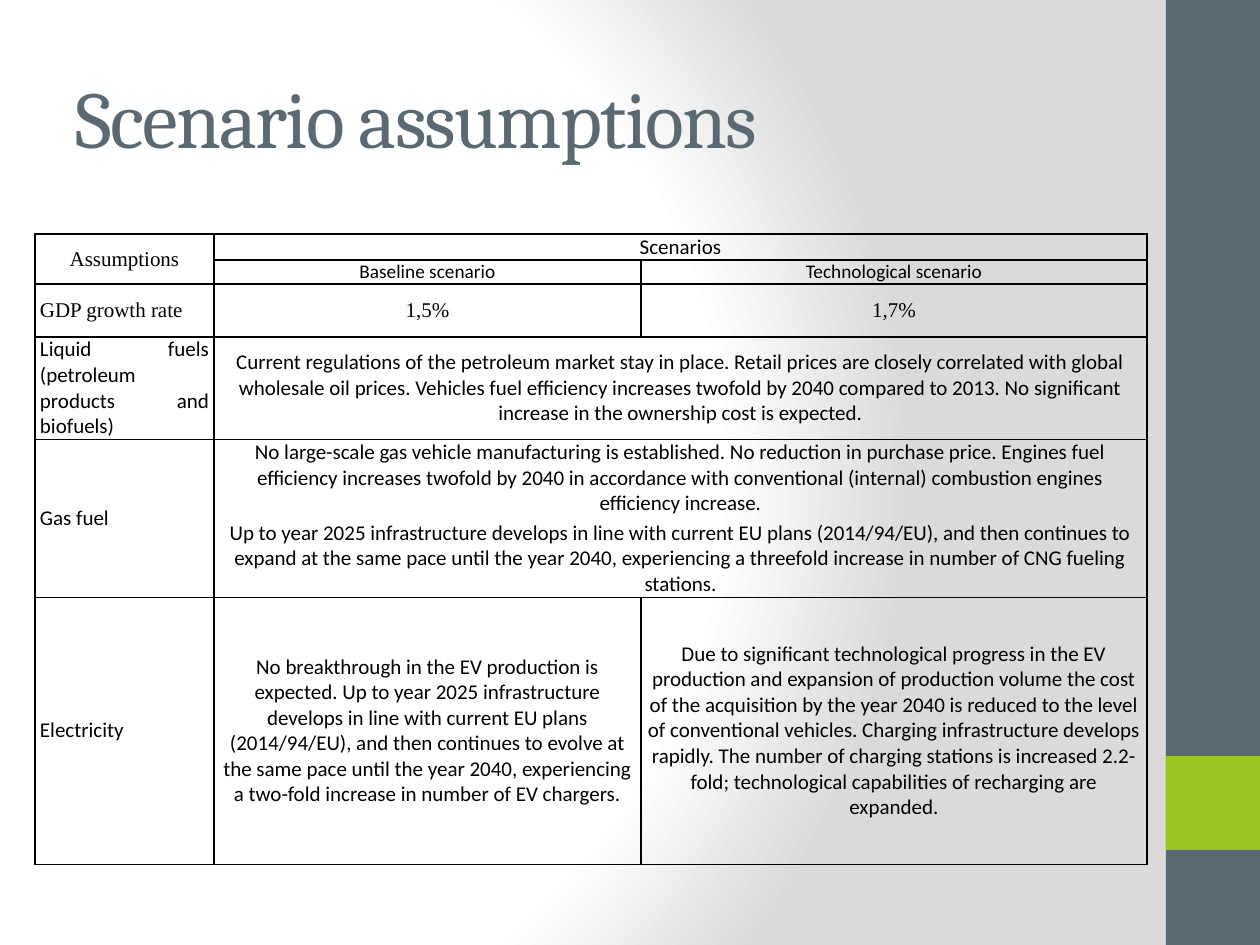
from lxml import etree
from pptx import Presentation
from pptx.dml.color import RGBColor
from pptx.enum.shapes import MSO_SHAPE
from pptx.enum.text import MSO_ANCHOR, PP_ALIGN
from pptx.oxml import parse_xml
from pptx.oxml.ns import nsdecls, qn
from pptx.util import Pt

RECT = MSO_SHAPE.RECTANGLE
MIDDLE = MSO_ANCHOR.MIDDLE
LEFT, CENTER, JUSTIFY = PP_ALIGN.LEFT, PP_ALIGN.CENTER, PP_ALIGN.JUSTIFY

PX = 914400 / 126
COLORS = {"slate": "5B6973", "green": "98C723", "black": "000000",
          "white": "FFFFFF", "gray": "DADADA"}
TITLE_FONT, SANS, SERIF = "Cambria", "Calibri", "Times New Roman"

COLUMNS = [179, 427, 506]
ROWS = [26, 24, 53, 102, 158, 267]
MERGES = [((0, 0), (1, 0)), ((0, 1), (0, 2)), ((3, 1), (3, 2)), ((4, 1), (4, 2))]

# (row, column, font, size, paragraphs)
CELLS = [
    (0, 0, SERIF, 12, ["Assumptions"]),
    (0, 1, SANS, 12, ["Scenarios"]),
    (1, 1, SANS, 11, ["Baseline scenario"]),
    (1, 2, SANS, 11, ["Technological scenario"]),
    (2, 0, SERIF, 12, ["GDP growth rate"]),
    (2, 1, SERIF, 12, ["1,5%"]),
    (2, 2, SERIF, 12, ["1,7%"]),
    (3, 0, SANS, 12, ["Liquid fuels (petroleum products and biofuels)"]),
    (3, 1, SANS, 12, [
        "Current regulations of the petroleum market stay in place. Retail prices are "
        "closely correlated with global wholesale oil prices. Vehicles fuel efficiency "
        "increases twofold by 2040 compared to 2013. No significant increase in the "
        "ownership cost is expected."]),
    (4, 0, SANS, 12, ["Gas fuel"]),
    (4, 1, SANS, 12, [
        "No large-scale gas vehicle manufacturing is established. No reduction in "
        "purchase price. Engines fuel efficiency increases twofold by 2040 in accordance "
        "with conventional (internal) combustion engines efficiency increase.",
        "Up to year 2025 infrastructure develops in line with current EU plans "
        "(2014/94/EU), and then continues to expand at the same pace until the year 2040, "
        "experiencing a threefold increase in number of CNG fueling stations."]),
    (5, 0, SANS, 12, ["Electricity"]),
    (5, 1, SANS, 12, [
        "No breakthrough in the EV production is expected. Up to year 2025 infrastructure "
        "develops in line with current EU plans (2014/94/EU), and then continues to evolve "
        "at the same pace until the year 2040, experiencing a two-fold increase in number "
        "of EV chargers."]),
    (5, 2, SANS, 12, [
        "Due to significant technological progress in the EV production and expansion of "
        "production volume the cost of the acquisition by the year 2040 is reduced to the "
        "level of conventional vehicles. Charging infrastructure develops rapidly. The "
        "number of charging stations is increased 2.2-fold; technological capabilities of "
        "recharging are expanded."]),
]


def px(n):
    return round(n * PX)


def rgb(name):
    return RGBColor.from_string(COLORS[name])


class SlideBuilder:
    def __init__(self, s):
        self.s = s

    def background(self, stops, focus):
        """Radial gradient; focus holds the l, t, r, b insets in percent."""
        gs = "".join(f'<a:gs pos="{pos * 1000}"><a:srgbClr val="{COLORS[c]}"/></a:gs>'
                     for pos, c in stops)
        rect = " ".join(f'{side}="{v * 1000}"' for side, v in zip("ltrb", focus))
        self.s.background.fill.solid()
        bg = next(self.s.element.iter(qn("p:bgPr")))
        bg.replace(bg[0], parse_xml(
            f'<a:gradFill {nsdecls("a")} rotWithShape="1"><a:gsLst>{gs}</a:gsLst>'
            f'<a:path path="circle"><a:fillToRect {rect}/></a:path></a:gradFill>'))

    def rect(self, x, y, w, h, color):
        sp = self.s.shapes.add_shape(RECT, px(x), px(y), px(w), px(h))
        sp.shadow.inherit = False
        sp.fill.solid()
        sp.fill.fore_color.rgb = rgb(color)
        sp.line.fill.background()

    def run(self, p, text, font, size, color):
        r = p.add_run()
        r.text = text
        r.font.name, r.font.size = font, Pt(size)
        r.font.color.rgb = rgb(color)
        return r

    def title(self, x, y, w, h, text):
        sp = self.s.shapes.title
        sp.left, sp.top, sp.width, sp.height = px(x), px(y), px(w), px(h)
        tf = sp.text_frame
        tf.word_wrap, tf.vertical_anchor = True, MIDDLE
        p = tf.paragraphs[0]
        p.alignment = LEFT
        r = self.run(p, text, TITLE_FONT, 46, "slate")
        r.font._element.set("spc", "-100")

    def table(self, x, y, columns, rows, merges):
        frame = self.s.shapes.add_table(len(rows), len(columns), px(x), px(y),
                                        px(sum(columns)), px(sum(rows)))
        table = frame.table
        table.first_row = table.horz_banding = False
        for col, w in zip(table.columns, columns):
            col.width = px(w)
        for row, h in zip(table.rows, rows):
            row.height = px(h)
        for cell in table.iter_cells():
            cell.fill.background()
            cell.vertical_anchor = MIDDLE
            cell.margin_left = cell.margin_right = px(5)
            cell.margin_top = cell.margin_bottom = 0
            self.borders(cell)
        for first, last in merges:
            table.cell(*first).merge(table.cell(*last))
        return table

    def borders(self, cell):
        tc_pr = cell._tc.get_or_add_tcPr()
        for i, side in enumerate("LRTB"):
            ln = etree.Element(qn(f"a:ln{side}"), w=str(Pt(1)))
            fill = etree.SubElement(ln, qn("a:solidFill"))
            etree.SubElement(fill, qn("a:srgbClr"), val=COLORS["black"])
            tc_pr.insert(i, ln)

    def cell_text(self, cell, paragraphs, font, size, align):
        tf = cell.text_frame
        for i, text in enumerate(paragraphs):
            p = tf.add_paragraph() if i else tf.paragraphs[0]
            p.alignment = align
            p.space_before = p.space_after = Pt(1)
            self.run(p, text, font, size, "black")


def main():
    prs = Presentation()
    prs.slide_width, prs.slide_height = px(1260), px(945)
    b = SlideBuilder(prs.slides.add_slide(prs.slide_layouts[5]))
    b.background([(0, "white"), (75, "white"), (100, "gray")], (20, 50, 100, 50))
    b.rect(1166, 0, 94, 945, "slate")
    b.rect(1166, 756, 94, 94, "green")
    b.title(63, 38, 1050, 157, "Scenario assumptions")
    table = b.table(35, 234, COLUMNS, ROWS, MERGES)
    for row, col, font, size, paragraphs in CELLS:
        align = JUSTIFY if col == 0 and row > 0 else CENTER
        b.cell_text(table.cell(row, col), paragraphs, font, size, align)
    prs.save("out.pptx")


if __name__ == "__main__":
    main()
